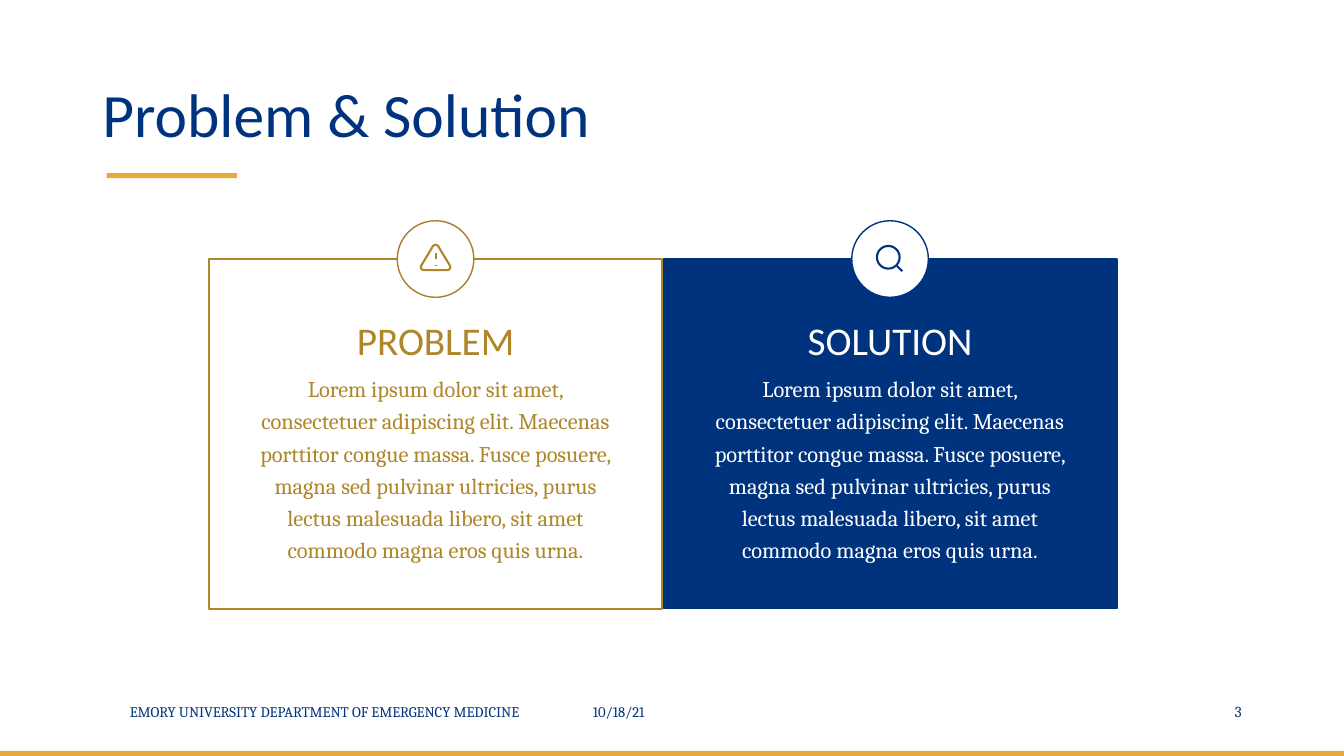
from lxml import etree
from pptx import Presentation
from pptx.dml.color import RGBColor
from pptx.enum.shapes import MSO_CONNECTOR, MSO_SHAPE
from pptx.enum.text import MSO_ANCHOR, PP_ALIGN
from pptx.oxml.ns import qn
from pptx.util import Inches, Pt

RECTANGLE, ELLIPSE = MSO_SHAPE.RECTANGLE, MSO_SHAPE.OVAL
STRAIGHT = MSO_CONNECTOR.STRAIGHT
LEFT, CENTER, RIGHT = PP_ALIGN.LEFT, PP_ALIGN.CENTER, PP_ALIGN.RIGHT
TOP, MIDDLE, BOTTOM = MSO_ANCHOR.TOP, MSO_ANCHOR.MIDDLE, MSO_ANCHOR.BOTTOM

SLIDE_WIDTH, SLIDE_HEIGHT = Inches(13.33), Inches(7.5)
COLUMNS, ROWS = 160, 90

NAVY, GOLD, BRONZE, AMBER, WHITE = "00337E", "AF8629", "AB7D2B", "E7A93A", "FFFFFF"
HEADING_FONT, BODY_FONT = "Calibri", "Cambria"

PANEL_LEFT, PANEL_TOP, PANEL_PITCH = 24.86, 30.84, 54.1
PANEL_WIDTH, PANEL_HEIGHT = 54, 41.64
BADGE_SIZE = 9.12
TEXT_WIDTH = 46
LOREM = (
    "Lorem ipsum dolor sit amet, consectetuer adipiscing elit. Maecenas porttitor "
    "congue massa. Fusce posuere, magna sed pulvinar ultricies, purus lectus "
    "malesuada libero, sit amet commodo magna eros quis urna."
)


def color(value):
    return RGBColor.from_string(value)


def column(count):
    return round(SLIDE_WIDTH * count / COLUMNS)


def row(count):
    return round(SLIDE_HEIGHT * count / ROWS)


def style_shape(shape, fill, line, line_width):
    shape.shadow.inherit = False
    if fill:
        shape.fill.solid()
        shape.fill.fore_color.rgb = color(fill)
    else:
        shape.fill.background()
    if line:
        shape.line.color.rgb = color(line)
        shape.line.width = Pt(line_width)
    else:
        shape.line.fill.background()


def add_block(slide, kind, left, top, width, height, fill=None, line=None, line_width=1):
    shape = slide.shapes.add_shape(kind, column(left), row(top), column(width), row(height))
    style_shape(shape, fill, line, line_width)


def add_stroke(slide, x1, y1, x2, y2, line):
    connector = slide.shapes.add_connector(STRAIGHT, column(x1), row(y1), column(x2), row(y2))
    connector.line.color.rgb = color(line)
    connector.line.width = Pt(1.5)
    etree.SubElement(connector._element.spPr, qn("a:effectLst"))


def add_text(slide, text, left, top, width, height, size, font, text_color,
             align=LEFT, anchor=TOP, spacing=1.0, inset=0.1):
    box = slide.shapes.add_textbox(column(left), row(top), column(width), row(height))
    frame = box.text_frame
    frame.word_wrap = True
    frame.vertical_anchor = anchor
    frame.margin_left = Inches(inset)
    paragraph = frame.paragraphs[0]
    paragraph.text = text
    paragraph.alignment = align
    paragraph.line_spacing = spacing
    paragraph.font.size = Pt(size)
    paragraph.font.name = font
    paragraph.font.color.rgb = color(text_color)


def add_warning_icon(slide, x, y, line):
    right_half = [(0.12, -1.68), (0.3, -1.56), (1.74, 0.84), (1.74, 1.08),
                  (1.62, 1.26), (1.38, 1.32)]
    left_half = [(-dx, dy) for dx, dy in reversed(right_half)]
    points = [(column(x + dx), row(y + dy)) for dx, dy in right_half + left_half]
    builder = slide.shapes.build_freeform(*points[0])
    builder.add_line_segments(points[1:], close=True)
    style_shape(builder.convert_to_shape(), None, line, 1.5)
    add_stroke(slide, x, y - 0.72, x, y, line)
    add_stroke(slide, x, y + 0.66, x, y + 0.78, line)


def add_search_icon(slide, x, y, line):
    add_block(slide, ELLIPSE, x - 1.56, y - 1.56, 2.7, 2.7, line=line, line_width=1.5)
    add_stroke(slide, x + 0.72, y + 0.72, x + 1.44, y + 1.44, line)


def add_panel(slide, index, heading, fill, border, border_width, badge_line, text_color, add_icon):
    left = PANEL_LEFT + index * PANEL_PITCH
    center = left + PANEL_WIDTH / 2
    text_left = center - TEXT_WIDTH / 2
    add_block(slide, RECTANGLE, left, PANEL_TOP, PANEL_WIDTH, PANEL_HEIGHT,
              fill, border, border_width)
    add_block(slide, ELLIPSE, center - BADGE_SIZE / 2, PANEL_TOP - BADGE_SIZE / 2,
              BADGE_SIZE, BADGE_SIZE, WHITE, badge_line)
    add_text(slide, heading, text_left, 37.7, TEXT_WIDTH, 6.2, 28, HEADING_FONT,
             text_color, CENTER, spacing=0.9)
    add_text(slide, LOREM, text_left, 43.44, TEXT_WIDTH, 24.7, 16, BODY_FONT,
             text_color, CENTER, spacing=1.2)
    add_icon(slide, center, PANEL_TOP, border)


def add_footer(slide):
    footer_top, footer_height = 82.3, 4.8
    add_text(slide, "EMORY UNIVERSITY DEPARTMENT OF EMERGENCY MEDICINE", 11, footer_top,
             56.5, footer_height, 10.5, BODY_FONT, NAVY, CENTER, MIDDLE, inset=0)
    add_text(slide, "10/18/21", 69.4, footer_top, 36, footer_height, 10.5,
             BODY_FONT, NAVY, LEFT, MIDDLE)
    add_text(slide, "3", 140.7, footer_top, 8.3, footer_height, 11,
             BODY_FONT, NAVY, RIGHT, MIDDLE)
    add_block(slide, RECTANGLE, 0, 89.4, COLUMNS, 0.6, AMBER)


def main():
    presentation = Presentation()
    presentation.slide_width = SLIDE_WIDTH
    presentation.slide_height = SLIDE_HEIGHT
    slide = presentation.slides.add_slide(presentation.slide_layouts[6])
    add_text(slide, "Problem & Solution", 11, 3.1, 138, 15.5, 44, HEADING_FONT, NAVY,
             anchor=BOTTOM, spacing=0.9)
    add_block(slide, RECTANGLE, 12.7, 20.6, 15.5, 0.6, AMBER)
    add_panel(slide, 0, "PROBLEM", WHITE, GOLD, 1.5, BRONZE, GOLD, add_warning_icon)
    add_panel(slide, 1, "SOLUTION", NAVY, NAVY, 1, NAVY, WHITE, add_search_icon)
    add_footer(slide)
    presentation.save("out.pptx")


if __name__ == "__main__":
    main()
